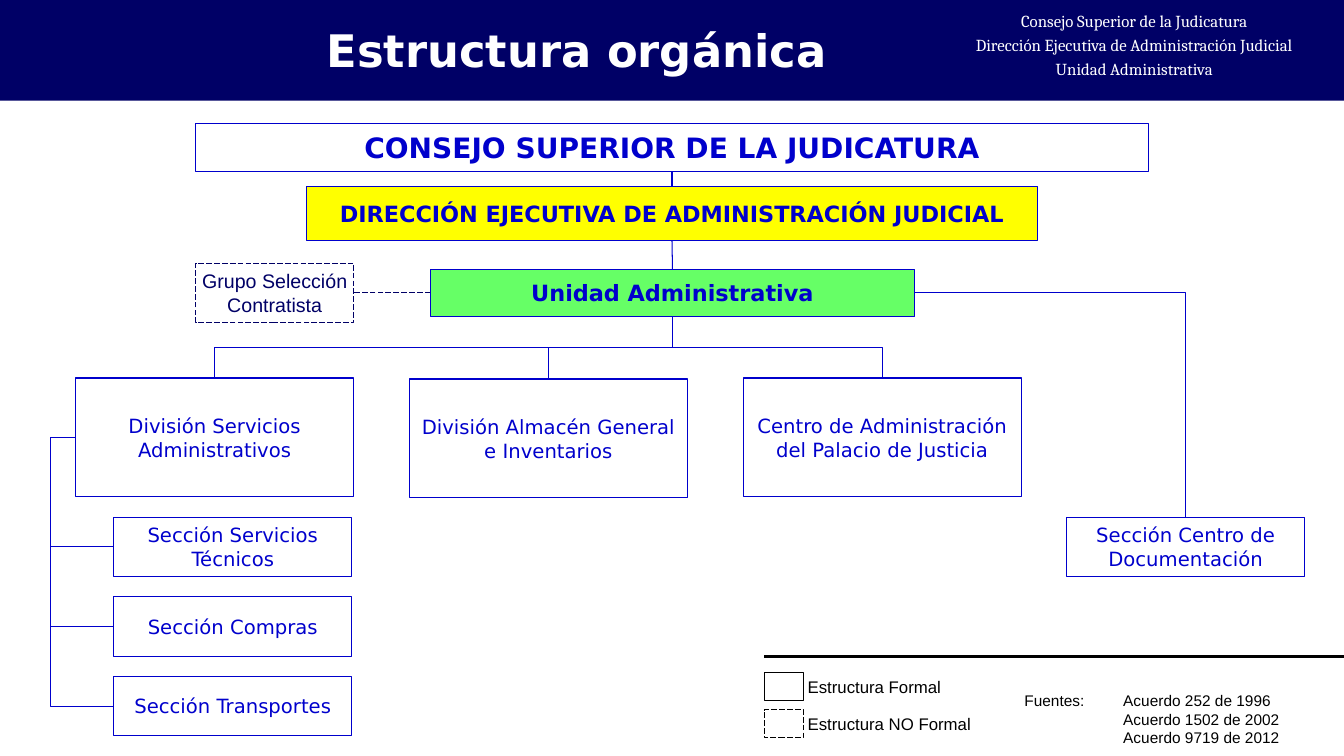
from lxml import etree
from pptx import Presentation
from pptx.dml.color import RGBColor
from pptx.enum.dml import MSO_LINE
from pptx.enum.shapes import MSO_CONNECTOR, MSO_SHAPE
from pptx.enum.text import MSO_ANCHOR, PP_ALIGN
from pptx.oxml.ns import qn
from pptx.util import Emu, Pt

EMU_PER_PX = 9144  # 100 px to the inch
RECTANGLE = MSO_SHAPE.RECTANGLE
STRAIGHT, ELBOW = MSO_CONNECTOR.STRAIGHT, MSO_CONNECTOR.ELBOW
LONG_DASH = MSO_LINE.LONG_DASH
LEFT, CENTER = PP_ALIGN.LEFT, PP_ALIGN.CENTER
TOP_ANCHOR, MIDDLE = MSO_ANCHOR.TOP, MSO_ANCHOR.MIDDLE
TOP, LEFT_SIDE, BOTTOM, RIGHT_SIDE = range(4)

NAVY, BLUE, BLACK, WHITE = "000066", "0000CC", "000000", "FFFFFF"
YELLOW, GREEN = "FFFF00", "66FF66"
SANS, SERIF, PLAIN = "DejaVu Sans", "Cambria", "Arial"


def px(length):
    return Emu(length * EMU_PER_PX)


def color(value):
    return RGBColor.from_string(value)


class OrgChart:
    def __init__(self, page):
        self.shapes = page.shapes

    def set_text(self, shape, text, size, font, ink, bold=False, align=CENTER,
                 anchor=MIDDLE, insets=(4, 4), space_before=0):
        frame = shape.text_frame
        frame.word_wrap = True
        frame.vertical_anchor = anchor
        frame.margin_left = frame.margin_right = px(insets[0])
        frame.margin_top = frame.margin_bottom = px(insets[1])
        frame.text = text
        for para in frame.paragraphs:
            para.alignment = align
            para.space_before = Pt(space_before)
            for span in para.runs:
                span.font.name = font
                span.font.size = Pt(size)
                span.font.bold = bold
                span.font.color.rgb = color(ink)

    def label(self, place, text, size, font, ink, **style):
        box = self.shapes.add_textbox(*map(px, place))
        self.set_text(box, text, size, font, ink, **style)
        return box

    def stroke(self, line, ink, weight, dash=None):
        line.color.rgb = color(ink)
        line.width = Pt(weight)
        if dash:
            line.dash_style = dash

    def box(self, place, fill=None, ink=None, weight=0.75, dash=None):
        shape = self.shapes.add_shape(RECTANGLE, *map(px, place))
        shape.shadow.inherit = False
        if fill:
            shape.fill.solid()
            shape.fill.fore_color.rgb = color(fill)
        else:
            shape.fill.background()
        if ink:
            self.stroke(shape.line, ink, weight, dash)
        else:
            shape.line.fill.background()
        return shape

    def unit(self, place, text, size=14, fill=None, bold=False):
        shape = self.box(place, fill, BLUE)
        self.set_text(shape, text, size, SANS, BLUE, bold)
        return shape

    def line(self, kind, ends, ink, weight, dash=None):
        link = self.shapes.add_connector(kind, *map(px, ends))
        self.stroke(link.line, ink, weight, dash)
        etree.SubElement(link._element.spPr, qn("a:effectLst"))
        return link

    def join(self, start, start_side, end, end_side, kind=STRAIGHT,
             ink=BLUE, weight=0.5, dash=None):
        link = self.line(kind, (0, 0, 0, 0), ink, weight, dash)
        link.begin_connect(start, start_side)
        link.end_connect(end, end_side)
        return link

    def branch_down(self, parent, child):
        """Elbow that leaves downwards, runs sideways and enters from above."""
        link = self.join(parent, BOTTOM, child, TOP, ELBOW)
        across, down = link.end_x - link.begin_x, link.end_y - link.begin_y
        middle_x = (link.begin_x + link.end_x) // 2
        middle_y = (link.begin_y + link.end_y) // 2
        link.width, link.height = Emu(down), Emu(abs(across))
        link.left = Emu(middle_x - down // 2)
        link.top = Emu(middle_y - abs(across) // 2)
        turn = 270 if across > 0 else 90
        frame = link._element.spPr.find(qn("a:xfrm"))
        frame.set("rot", str(turn * 60000))
        frame.set("flipH", "1" if across > 0 else "0")

    def branch_side(self, parent, child, reach):
        """Elbow that leaves to the left by reach px and comes back to the child."""
        link = self.join(parent, LEFT_SIDE, child, LEFT_SIDE, ELBOW)
        bend = round(-px(reach) / link.width * 100000)
        values = link._element.spPr.find(qn("a:prstGeom")).get_or_add_avLst()
        etree.SubElement(values, qn("a:gd"), name="adj1", fmla=f"val {bend}")

    def corner(self, parent, child):
        """Single bend: out of the right side, then down into the top."""
        link = self.join(parent, RIGHT_SIDE, child, TOP, ELBOW)
        link._element.spPr.find(qn("a:prstGeom")).set("prst", "bentConnector2")


def add_tab(para, position):
    tabs = etree.SubElement(para._p.get_or_add_pPr(), qn("a:tabLst"))
    etree.SubElement(tabs, qn("a:tab"), pos=str(px(position)), algn="l")


def draw_header(chart):
    chart.box((0, 0, 1333, 100), NAVY)
    chart.label((938, 6, 374, 82),
                "Consejo Superior de la Judicatura\n"
                "Dirección Ejecutiva de Administración Judicial\n"
                "Unidad Administrativa",
                12, SERIF, WHITE, anchor=TOP_ANCHOR, insets=(10, 5), space_before=2.8)
    chart.label((274, 18, 596, 64), "Estructura orgánica", 32, SANS, WHITE,
                bold=True, anchor=TOP_ANCHOR, insets=(10, 5))


def draw_units(chart):
    council = chart.unit((194, 123, 945, 47), "CONSEJO SUPERIOR DE LA JUDICATURA",
                         20, bold=True)
    direction = chart.unit((304, 185, 725, 54),
                           "DIRECCIÓN EJECUTIVA DE ADMINISTRACIÓN JUDICIAL",
                           16, YELLOW, True)
    admin = chart.unit((427, 267, 480, 47), "Unidad Administrativa", 16, GREEN, True)
    chart.join(direction, TOP, council, BOTTOM, weight=0.75)
    chart.join(direction, BOTTOM, admin, TOP, weight=0.75)

    divisions = [
        chart.unit((left, top, 276, 118), name)
        for left, top, name in (
            (75, 375, "División Servicios Administrativos"),
            (406, 376, "División Almacén General e Inventarios"),
            (737, 375, "Centro de Administración del Palacio de Justicia"),
        )
    ]
    for division in divisions:
        chart.branch_down(admin, division)

    sections = ("Sección Servicios Técnicos", "Sección Compras", "Sección Transportes")
    for row, name in enumerate(sections):
        section = chart.unit((113, 513 + row * 79, 236, 59), name)
        chart.branch_side(divisions[0], section, 25)

    documentation = chart.unit((1058, 513, 236, 59), "Sección Centro de Documentación")
    chart.corner(admin, documentation)

    group = chart.box((194, 261, 157, 59), None, NAVY, 0.5, LONG_DASH)
    chart.set_text(group, "Grupo Selección Contratista", 14, PLAIN, NAVY)
    chart.join(admin, LEFT_SIDE, group, RIGHT_SIDE, ink=NAVY, dash=LONG_DASH)


def draw_legend(chart):
    chart.line(STRAIGHT, (758, 651, 1333, 651), BLACK, 2.25)
    entries = (("Estructura Formal", None), ("Estructura NO Formal", LONG_DASH))
    for row, (name, dash) in enumerate(entries):
        top = 667 + row * 37
        chart.box((758, top, 39, 28), None, BLACK, 0.5, dash)
        chart.label((797, top, 205, 28), name, 12, PLAIN, BLACK, align=LEFT)
    sources = chart.label((1012, 682, 279, 63),
                          "Fuentes: \tAcuerdo 252 de 1996\n"
                          "\tAcuerdo 1502 de 2002\n"
                          "\tAcuerdo 9719 de 2012",
                          11, PLAIN, BLACK, align=LEFT, anchor=TOP_ANCHOR)
    for para in sources.text_frame.paragraphs:
        add_tab(para, 98)


def main():
    deck = Presentation()
    deck.slide_width, deck.slide_height = px(1333), px(750)
    page = deck.slides.add_slide(deck.slide_layouts[6])
    chart = OrgChart(page)
    draw_header(chart)
    draw_units(chart)
    draw_legend(chart)
    deck.save("out.pptx")


if __name__ == "__main__":
    main()
